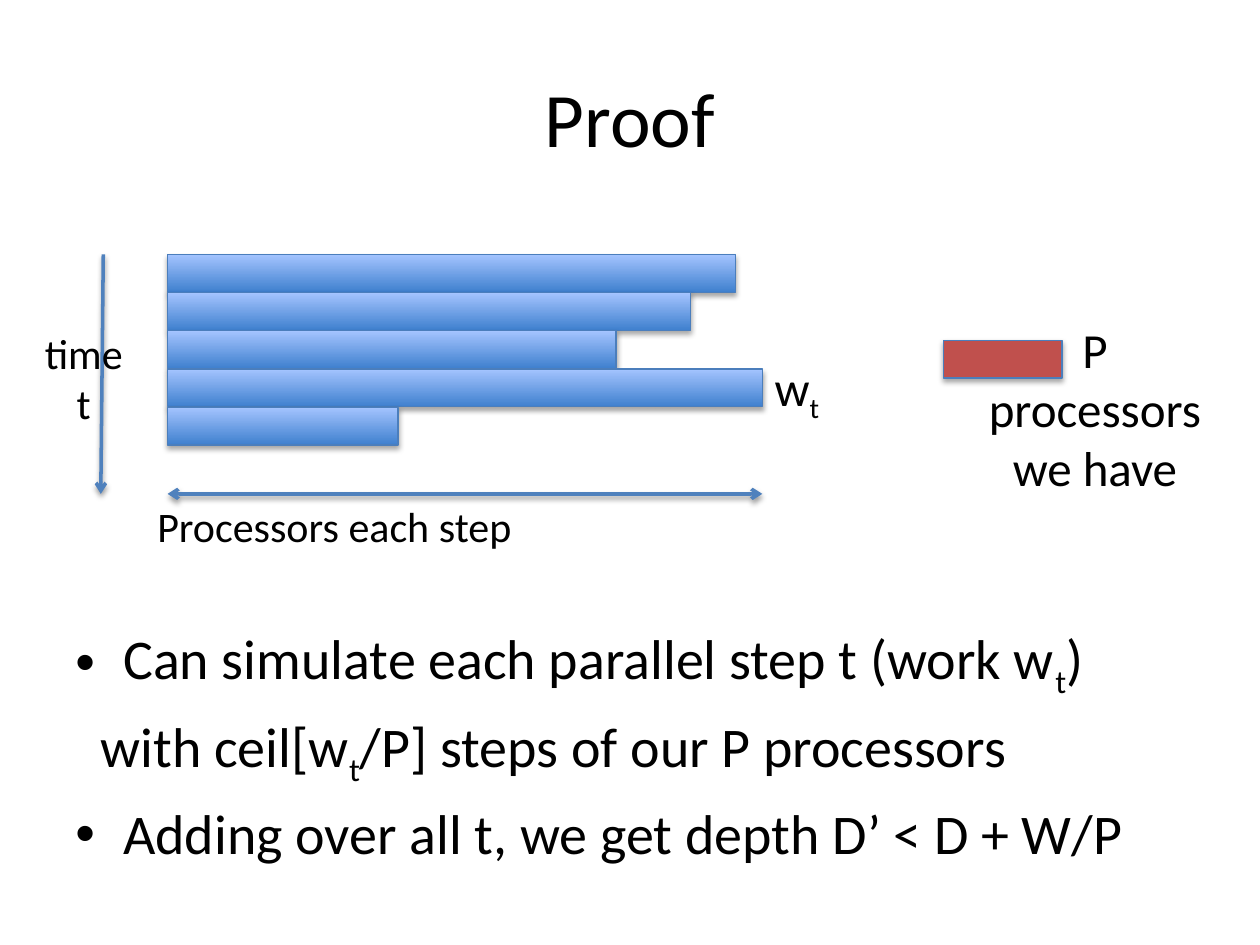
from lxml.etree import SubElement
from pptx import Presentation
from pptx.dml.color import RGBColor
from pptx.enum.shapes import MSO_CONNECTOR as Connector, MSO_SHAPE as Shape
from pptx.enum.text import MSO_ANCHOR as Anchor, PP_ALIGN as Align
from pptx.oxml.ns import qn
from pptx.util import Inches, Pt


def color(value):
    return RGBColor.from_string(value)


class ProofSlide:
    """Draws the elements of the proof slide in one shared style."""

    font = "Calibri"
    ink, outline, arrow_color = "000000", "4B7EBC", "4F81BD"
    bar_stops = ("3F80CE", "A4C4FF")

    def __init__(self, deck):
        self.slide = deck.slides.add_slide(deck.slide_layouts[6])

    def cast_shadow(self, item, distance, opacity):
        effects = SubElement(item._element.spPr, qn("a:effectLst"))
        shadow = SubElement(effects, qn("a:outerShdw"), blurRad=str(Pt(3.1)),
                            dist=str(Pt(distance)), dir="5400000", rotWithShape="0")
        black = SubElement(shadow, qn("a:srgbClr"), val=self.ink)
        SubElement(black, qn("a:alpha"), val=str(opacity * 1000))

    def bar(self, left, top, width, height, solid=None):
        bar = self.slide.shapes.add_shape(
            Shape.RECTANGLE, Inches(left), Inches(top), Inches(width), Inches(height))
        if solid:
            bar.fill.solid()
            bar.fill.fore_color.rgb = color(solid)
        else:
            bar.fill.gradient()
            bar.fill.gradient_angle = 90
            for stop, value in zip(bar.fill.gradient_stops, self.bar_stops):
                stop.color.rgb = color(value)
        bar.line.color.rgb = color(self.outline)
        bar.line.width = Pt(0.75)
        self.cast_shadow(bar, 1.8, 35)

    def arrow(self, start, end, ends=("tailEnd",)):
        arrow = self.slide.shapes.add_connector(
            Connector.STRAIGHT, *map(Inches, start + end))
        arrow.line.color.rgb = color(self.arrow_color)
        arrow.line.width = Pt(2)
        line = arrow._element.spPr.find(qn("a:ln"))
        for tip in ends:
            SubElement(line, qn(f"a:{tip}"), type="arrow")
        self.cast_shadow(arrow, 1.6, 38)

    def text(self, left, top, width, height, lines, size, wrap=False,
             anchor=Anchor.TOP, **paragraph_format):
        box = self.slide.shapes.add_textbox(
            Inches(left), Inches(top), Inches(width), Inches(height))
        frame = box.text_frame
        frame.word_wrap, frame.vertical_anchor = wrap, anchor
        for number, line in enumerate(lines):
            paragraph = frame.paragraphs[0] if number == 0 else frame.add_paragraph()
            for name, value in paragraph_format.items():
                setattr(paragraph, name, value)
            for position, part in enumerate(line.split("_")):
                self.run(paragraph, part, size, subscript=position % 2 == 1)
        return frame.paragraphs

    def run(self, paragraph, words, size, subscript):
        run = paragraph.add_run()
        run.text = words
        for name, value in {"name": self.font, "size": Pt(size)}.items():
            setattr(run.font, name, value)
        run.font.color.rgb = color(self.ink)
        if subscript:
            run._r.get_or_add_rPr().set("baseline", "-25000")

    def indent(self, paragraph, margin, bullet):
        properties = paragraph._p.get_or_add_pPr()
        properties.set("marL", str(Inches(margin)))
        if bullet:
            properties.set("indent", str(-Inches(margin)))
            SubElement(properties, qn("a:buFont"), typeface="Arial")
            SubElement(properties, qn("a:buChar"), char="•")


def main():
    deck = Presentation()
    deck.slide_width, deck.slide_height = Inches(10), Inches(7.5)
    proof = ProofSlide(deck)

    proof.text(0.5, 0.3, 9, 1.25, ["Proof"], 44, wrap=True,
               anchor=Anchor.MIDDLE, alignment=Align.CENTER)
    claims = proof.text(
        0.5, 4.9, 9, 1.8,
        ["Can simulate each parallel step t (work w_t_)",
         "with ceil[w_t_/P] steps of our P processors",
         "Adding over all t, we get depth D’ < D + W/P"],
        32, wrap=True, space_before=Pt(6.4))
    claims[0].space_before = Pt(0)
    for claim, (margin, bullet) in zip(claims, [(0.38, True), (0.2, False), (0.38, True)]):
        proof.indent(claim, margin, bullet)

    steps_left, steps_top, step_height = 1.33, 2.02, 0.3
    step_widths = [4.51, 4.15, 3.56, 4.72, 1.83]
    for step, width in enumerate(step_widths):
        proof.bar(steps_left, steps_top + step * 0.303, width, step_height)

    axis_y, widest = 3.92, steps_left + max(step_widths)
    proof.arrow((0.82, steps_top), (0.8, axis_y))
    proof.text(0.25, 2.55, 0.83, 0.91, ["time", "t"], 24, alignment=Align.CENTER)
    proof.bar(7.49, 2.7, 0.94, step_height, solid="C0504D")
    proof.text(1.15, axis_y, 3.06, 0.5, ["Processors each step"], 24)
    proof.text(7.73, 2.49, 1.92, 1.51, ["P", "processors", "we have"], 28,
               alignment=Align.CENTER)
    proof.arrow((steps_left, axis_y), (widest, axis_y), ("headEnd", "tailEnd"))
    proof.text(widest, 2.79, 0.85, 0.57, ["w_t"], 28, wrap=True)

    deck.save("out.pptx")


if __name__ == "__main__":
    main()
